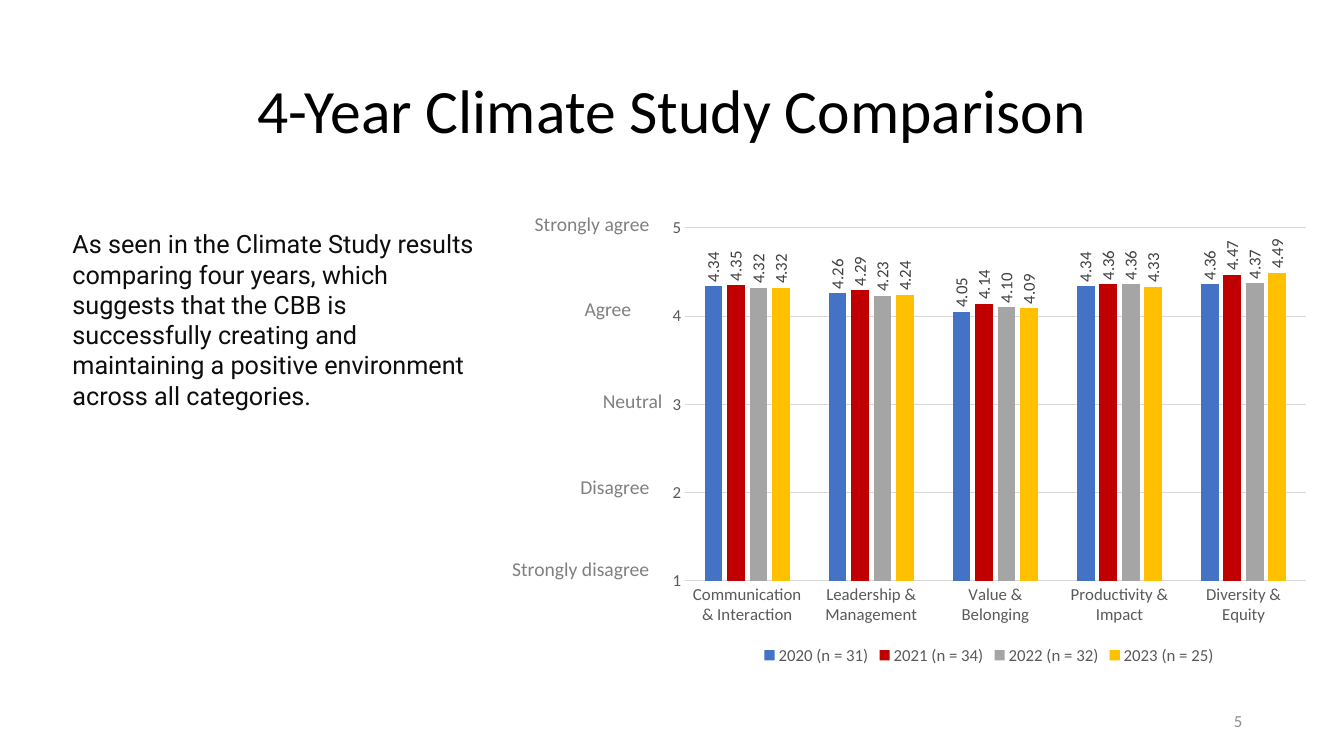
from dataclasses import dataclass

from pptx import Presentation
from pptx.chart.data import CategoryChartData
from pptx.dml.color import RGBColor
from pptx.enum.chart import XL_CHART_TYPE as ChartType
from pptx.enum.chart import XL_LABEL_POSITION as LabelPosition
from pptx.enum.chart import XL_LEGEND_POSITION as LegendPosition
from pptx.enum.chart import XL_TICK_MARK as TickMark
from pptx.enum.text import MSO_ANCHOR as Anchor
from pptx.enum.text import PP_ALIGN as Align
from pptx.oxml.ns import qn
from pptx.util import Inches, Pt


@dataclass(frozen=True)
class Theme:
    """Fonts, colours and type sizes of the slide."""
    font: str = "Calibri"
    body_font: str = "Roboto"
    title_color: str = "000000"
    body_color: str = "0D0D0D"
    scale_color: str = "808080"
    number_color: str = "8C8C8C"
    axis_color: str = "595959"
    label_color: str = "404040"
    grid_color: str = "D9D9D9"
    year_colors: tuple = ("4472C4", "C00000", "A5A5A5", "FFC000")
    title_size: int = 44
    body_size: int = 18
    scale_size: int = 14
    small_size: int = 12


CATEGORIES = ("Communication & Interaction", "Leadership & Management",
              "Value & Belonging", "Productivity & Impact", "Diversity & Equity")
SCORES = {
    "2020 (n = 31)": (4.34, 4.26, 4.05, 4.34, 4.36),
    "2021 (n = 34)": (4.35, 4.29, 4.14, 4.36, 4.47),
    "2022 (n = 32)": (4.32, 4.23, 4.10, 4.36, 4.37),
    "2023 (n = 25)": (4.32, 4.24, 4.09, 4.33, 4.49),
}
SCALE = (
    ("Strongly agree", 4.87, 2.05, 1.67),
    ("Agree", 4.69, 2.90, 1.67),
    ("Neutral", 5.00, 3.81, 1.67),
    ("Disagree", 4.87, 4.66, 1.67),
    ("Strongly disagree", 4.24, 5.48, 2.30),
)
FINDING = ("As seen in the Climate Study results comparing four years, which "
           "suggests that the CBB is successfully creating and maintaining a "
           "positive environment across all categories.")


def style_font(font, *, size, color, name):
    """Apply size, colour and typeface to a font."""
    font.size = Pt(size)
    font.name = name
    font.color.rgb = RGBColor.from_string(color)


def write_text(frame, text, *, align=Align.LEFT, anchor=Anchor.TOP,
               line_spacing=None, **font_format):
    """Fill a text frame with one formatted paragraph."""
    frame.word_wrap = True
    frame.vertical_anchor = anchor
    paragraph = frame.paragraphs[0]
    paragraph.alignment = align
    paragraph.line_spacing = line_spacing
    run = paragraph.add_run()
    run.text = text
    style_font(run.font, **font_format)


class SlideBuilder:
    """Adds themed elements to one slide."""

    def __init__(self, slide, theme):
        """Keep the slide and its theme."""
        self.slide = slide
        self.theme = theme

    def text(self, text, left, top, width, height, **text_format):
        """Add a text box."""
        box = self.slide.shapes.add_textbox(*map(Inches, (left, top, width, height)))
        write_text(box.text_frame, text, **{"name": self.theme.font, **text_format})

    def column_chart(self, categories, scores, left, top, width, height):
        """Add the clustered columns with one series a year."""
        data = CategoryChartData(number_format="0.00")
        data.categories = categories
        for year, values in scores.items():
            data.add_series(year, values)
        chart = self.slide.shapes.add_chart(
            ChartType.COLUMN_CLUSTERED,
            *map(Inches, (left, top, width, height)), data).chart
        chart.has_title = False
        style_font(chart.font, size=self.theme.small_size,
                   color=self.theme.axis_color, name=self.theme.font)
        chart.has_legend = True
        chart.legend.position = LegendPosition.BOTTOM
        chart.legend.include_in_layout = False

        plot = chart.plots[0]
        plot.vary_by_categories = False
        plot.gap_width = 219
        plot.overlap = -27
        for series, color in zip(plot.series, self.theme.year_colors):
            series.format.fill.solid()
            series.format.fill.fore_color.rgb = RGBColor.from_string(color)
            series.invert_if_negative = False
            self.value_labels(series.data_labels)
        self.axes(chart.category_axis, chart.value_axis)

    def value_labels(self, labels):
        """Show values upright above the columns."""
        labels.show_value = True
        labels.position = LabelPosition.OUTSIDE_END
        labels.number_format = "0.00"
        labels.number_format_is_linked = False
        style_font(labels.font, size=self.theme.small_size,
                   color=self.theme.label_color, name=self.theme.font)
        body = labels._element.find(qn("c:txPr")).find(qn("a:bodyPr"))
        body.set("rot", "-5400000")
        body.set("vert", "horz")

    def axes(self, category_axis, value_axis):
        """Style both axes and the gridlines."""
        for axis in (category_axis, value_axis):
            axis.major_tick_mark = axis.minor_tick_mark = TickMark.NONE
            style_font(axis.tick_labels.font, size=self.theme.small_size,
                       color=self.theme.axis_color, name=self.theme.font)
        value_axis.minimum_scale = 1
        value_axis.maximum_scale = 5
        value_axis.major_unit = 1
        value_axis.has_major_gridlines = True
        value_axis.tick_labels.number_format = "General"
        value_axis.tick_labels.number_format_is_linked = False
        value_axis.format.line.fill.background()
        for line in (category_axis.format.line, value_axis.major_gridlines.format.line):
            line.color.rgb = RGBColor.from_string(self.theme.grid_color)
            line.width = Pt(0.75)


def main():
    """Build and save the presentation."""
    theme = Theme()
    deck = Presentation()
    deck.slide_width = Inches(13.33)
    deck.slide_height = Inches(7.5)
    builder = SlideBuilder(deck.slides.add_slide(deck.slide_layouts[6]), theme)

    builder.text("4-Year Climate Study Comparison", 0.92, 0.4, 11.5, 1.45,
                 size=theme.title_size, color=theme.title_color,
                 align=Align.CENTER, anchor=Anchor.MIDDLE, line_spacing=0.9)
    for answer, left, top, width in SCALE:
        builder.text(answer, left, top, width, 0.34, size=theme.scale_size,
                     color=theme.scale_color, align=Align.RIGHT)
    builder.text("5", 9.42, 6.95, 3, 0.4, size=theme.small_size,
                 color=theme.number_color, align=Align.RIGHT, anchor=Anchor.MIDDLE)
    builder.column_chart(CATEGORIES, SCORES, 6.54, 2.07, 6.54, 4.57)
    builder.text(FINDING, 0.62, 2.22, 4.25, 1.62, size=theme.body_size,
                 color=theme.body_color, name=theme.body_font)
    deck.save("out.pptx")


if __name__ == "__main__":
    main()
